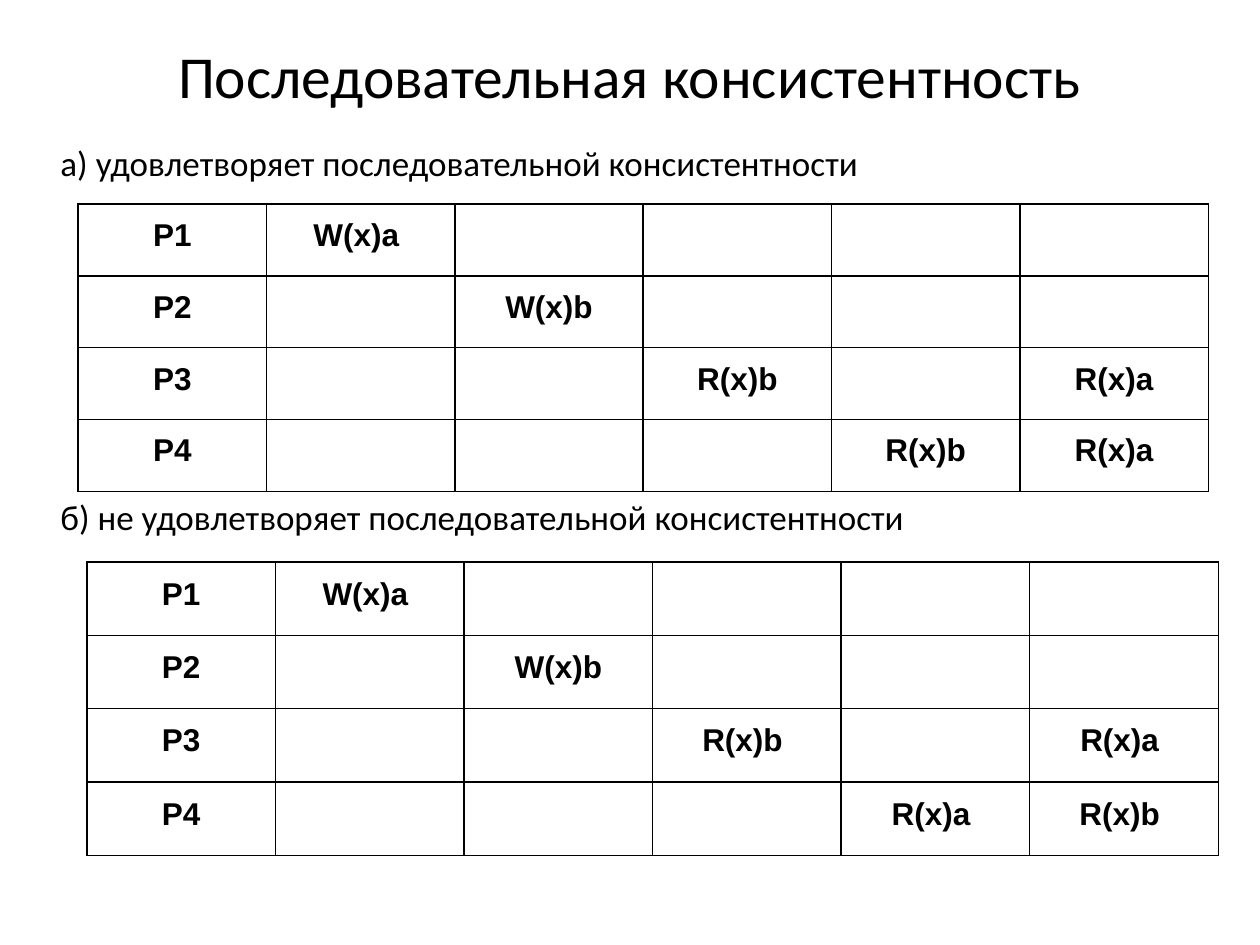
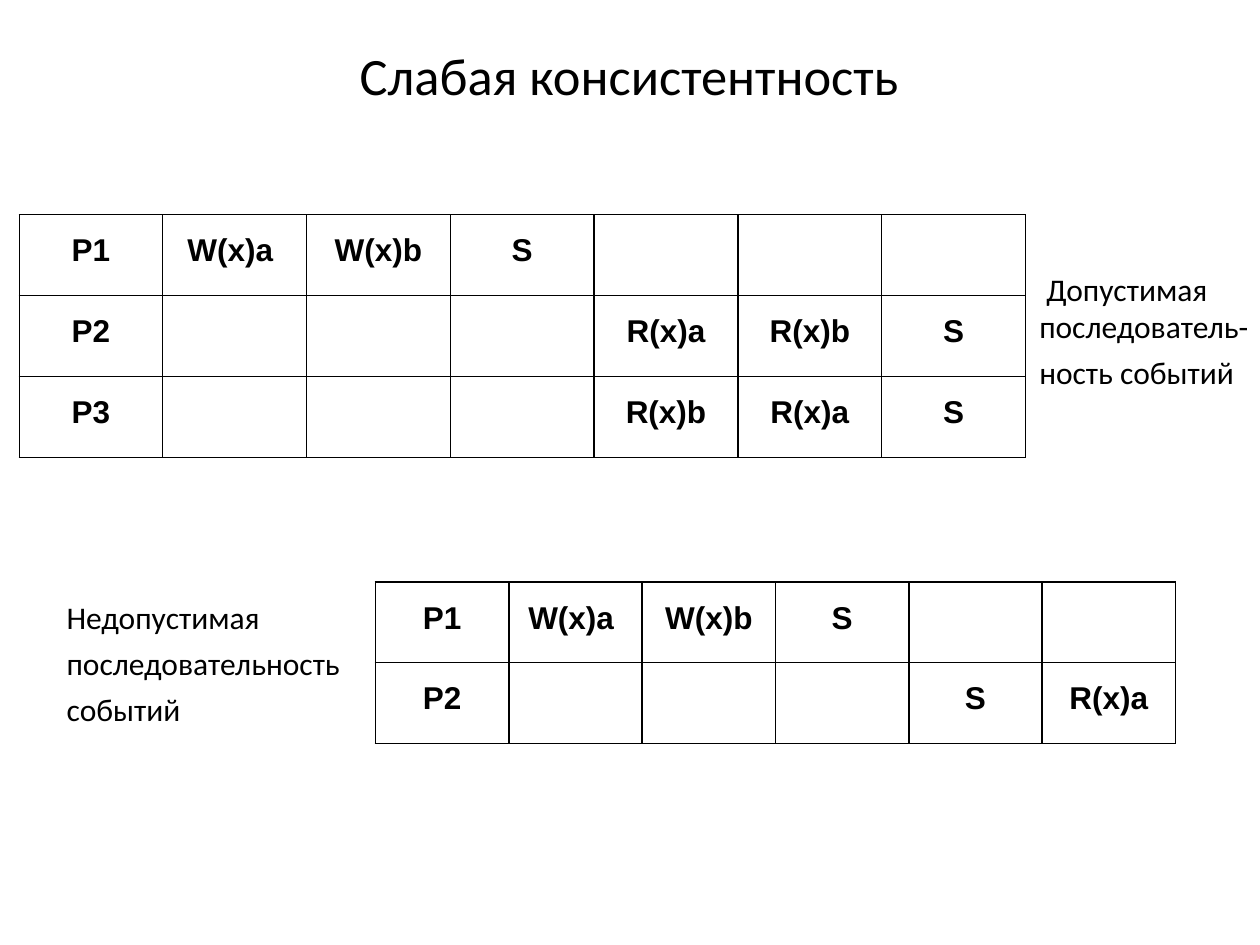
from pptx import Presentation
from pptx.dml.color import RGBColor
from pptx.enum.text import MSO_ANCHOR, MSO_AUTO_SIZE, PP_ALIGN
from pptx.oxml import parse_xml
from pptx.oxml.ns import nsdecls
from pptx.util import Inches, Pt

MID, TOP = MSO_ANCHOR.MIDDLE, MSO_ANCHOR.TOP
LEFT, MIDDLE = PP_ALIGN.LEFT, PP_ALIGN.CENTER
FIXED = MSO_AUTO_SIZE.NONE
INK, PAPER = "000000", "FFFFFF"
FACE, MONO = "Calibri", "Arial"
TITLE_BOX = (0.35, -0.03, 9.29, 1.25)
BODY_BOX = (0.38, 1.07, 10.24, 5.51)
BODY_SIZE, NOTE_SIZE, CELL_SIZE = 20, 18, 18
NOTE_GAP = 4.5
BOLD, THIN = 1, 0.25

SLIDES = [
    {
        "title": ("Последовательная консистентность", 34),
        "body": [
            ("а) удовлетворяет последовательной консистентности", 5),
            ("б) не удовлетворяет последовательной консистентности", 178.5),
        ],
        "grids": [
            {"box": (0.62, 1.62, 8.97, 2.28), "rule": BOLD, "rows": [
                ("P1", "W(x)a ", "", "", "", ""),
                ("P2", "", "W(x)b", "", "", ""),
                ("P3", "", "", "R(x)b", "", "R(x)a"),
                ("P4", "", "", "", "R(x)b", "R(x)a"),
            ]},
            {"box": (0.69, 4.46, 8.98, 2.33), "rule": BOLD, "rows": [
                ("P1", "W(x)a ", "", "", "", ""),
                ("P2", "", "W(x)b", "", "", ""),
                ("P3", "", "", "R(x)b ", "", "R(x)a "),
                ("P4", "", "", "", "R(x)a ", "R(x)b "),
            ]},
        ],
        "notes": [],
    },
    {
        "title": ("Слабая консистентность", 30),
        "body": [],
        "grids": [
            {"box": (0.15, 1.7, 7.99, 1.93), "rule": THIN, "rows": [
                ("P1", "W(x)a ", "W(x)b", "S", "", "", ""),
                ("P2", "", "", "", "R(x)a", "R(x)b", "S"),
                ("P3", "", "", "", "R(x)b", "R(x)a", "S"),
            ]},
            {"box": (2.98, 4.62, 6.35, 1.28), "rule": BOLD, "rows": [
                ("P1", "W(x)a ", "W(x)b", "S", "", ""),
                ("P2", "", "", "", "S", "R(x)a"),
            ]},
        ],
        "notes": [
            ((8.15, 2.09, 1.93, 1.19),
             [" Допустимая последователь-", "ность событий"]),
            ((0.43, 4.7, 3.15, 1.18),
             ["Недопустимая", "последовательность", "событий"]),
        ],
    },
]


def color(code):
    """Turn a hex string into a colour."""
    return RGBColor.from_string(code)


def place(shape, box):
    """Move a shape to a box given in inches."""
    shape.left, shape.top, shape.width, shape.height = map(Inches, box)


def style(para, size, face=FACE, align=LEFT, gap=0, bold=False):
    """Set the font, alignment and space before of a paragraph."""
    para.alignment = align
    para.space_before = Pt(gap)
    font = para.font
    font.size, font.name, font.bold = Pt(size), face, bold
    font.color.rgb = color(INK)


def write(shape, lines, size, align=LEFT, anchor=TOP):
    """Fill a shape with lines of text and the gaps above them."""
    frame = shape.text_frame
    frame.word_wrap, frame.auto_size = True, FIXED
    frame.vertical_anchor = anchor
    frame.text = "\n".join(text for text, gap in lines)
    for para, (text, gap) in zip(frame.paragraphs, lines):
        style(para, size, align=align, gap=gap)


def plain(shape):
    """Take bullets and indents off the paragraphs of a shape."""
    for para in shape.text_frame.paragraphs:
        props = para._p.get_or_add_pPr()
        props.set("marL", "0")
        props.set("indent", "0")
        mark = parse_xml(f"<a:buNone {nsdecls('a')}/>")
        props.find("{*}defRPr").addprevious(mark)


def frame_cell(cell, widths):
    """Draw the left, right, top and bottom borders of a cell."""
    props = cell._tc.get_or_add_tcPr()
    for spot, (side, width) in enumerate(zip("LRTB", widths)):
        props.insert(spot, parse_xml(
            f'<a:ln{side} {nsdecls("a")} w="{Pt(width)}"><a:solidFill>'
            f'<a:srgbClr val="{INK}"/></a:solidFill></a:ln{side}>'))


def add_grid(slide, box, rule, rows):
    """Add a table with equal columns and rows."""
    count = len(rows[0])
    shape = slide.shapes.add_table(len(rows), count, *map(Inches, box))
    table = shape.table
    table.first_row = table.horz_banding = False
    for col in table.columns:
        col.width = Inches(box[2] / count)
    for row, texts in zip(table.rows, rows):
        row.height = Inches(box[3] / len(rows))
        for spot, (cell, text) in enumerate(zip(row.cells, texts)):
            cell.fill.background()
            cell.vertical_anchor = MID
            cell.margin_left = cell.margin_right = Inches(0.1)
            cell.margin_top = cell.margin_bottom = Inches(0.1)
            cell.text = text
            para = cell.text_frame.paragraphs[0]
            style(para, CELL_SIZE, MONO, MIDDLE, NOTE_GAP, True)
            para.line_spacing = 0.62
            left = rule if spot == 0 else BOLD
            right = rule if spot == count - 1 else BOLD
            frame_cell(cell, (left, right, rule, rule))


def build(deck, data):
    """Add one slide with its title, list, tables and notes."""
    slide = deck.slides.add_slide(deck.slide_layouts[1 if data["body"] else 5])
    back = slide.background.fill
    back.solid()
    back.fore_color.rgb = color(PAPER)
    title = slide.shapes.title
    text, size = data["title"]
    place(title, TITLE_BOX)
    write(title, [(text, 0)], size, MIDDLE, MID)
    if data["body"]:
        body = slide.placeholders[1]
        place(body, BODY_BOX)
        write(body, data["body"], BODY_SIZE)
        plain(body)
    for grid in data["grids"]:
        add_grid(slide, **grid)
    for box, lines in data["notes"]:
        note = slide.shapes.add_textbox(*map(Inches, box))
        write(note, [(line, NOTE_GAP) for line in lines], NOTE_SIZE)


def main():
    """Build and save the deck."""
    deck = Presentation()
    deck.slide_width, deck.slide_height = Inches(10), Inches(7.5)
    for data in SLIDES:
        build(deck, data)
    deck.save("out.pptx")


if __name__ == "__main__":
    main()
